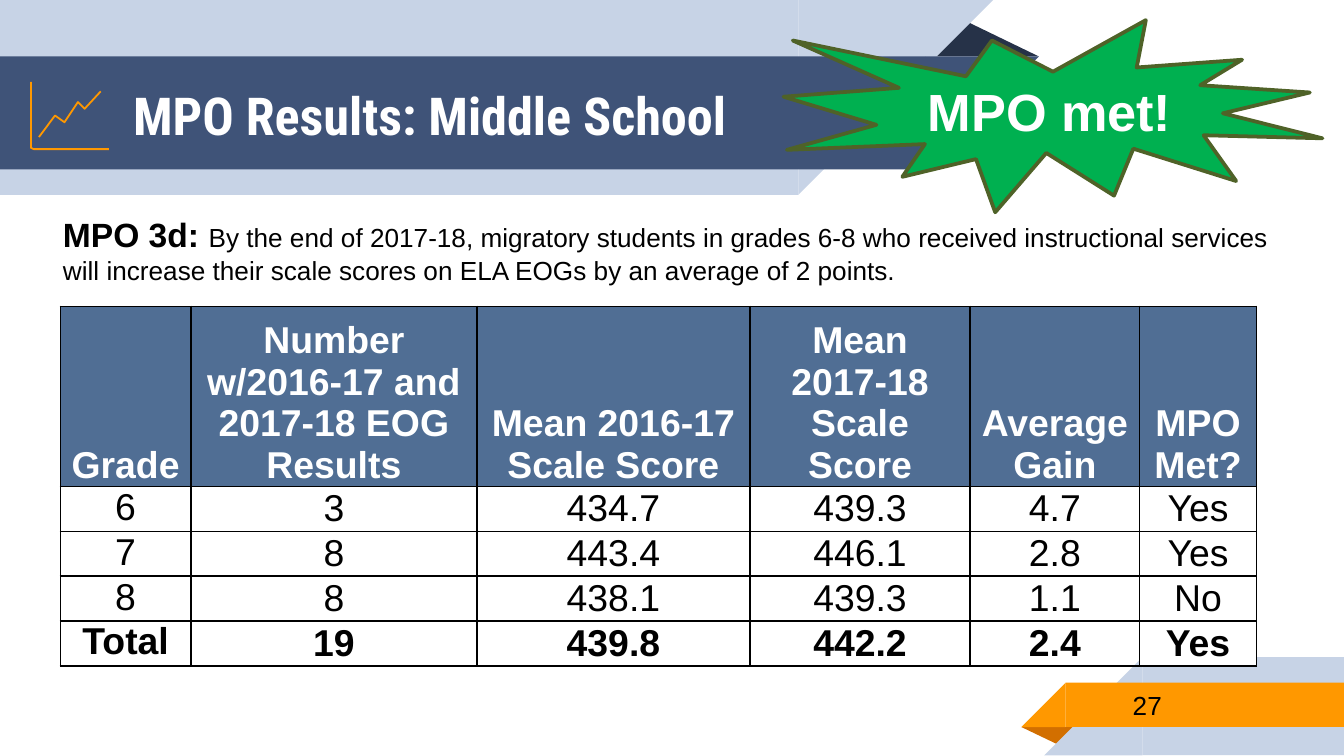
from lxml import etree
from pptx import Presentation
from pptx.dml.color import RGBColor
from pptx.enum.shapes import MSO_SHAPE as Kind
from pptx.enum.text import MSO_ANCHOR as Anchor, PP_ALIGN as Align
from pptx.oxml.ns import qn
from pptx.util import Inches, Pt

HEX = {
    "pale": "C7D3E6", "navy": "3F5378", "dark": "263248",
    "orange": "FF9800", "rust": "D26F00", "head": "506E94",
    "green": "00B050", "olive": "4F6228",
    "white": "FFFFFF", "black": "000000",
}
RGB = {name: RGBColor.from_string(code) for name, code in HEX.items()}


def style(font, size, color="black", bold=False, name="Arial"):
    font.size, font.bold, font.name = Pt(size), bold, name
    font.color.rgb = RGB[color]


def add_shape(kind, box, color, turn=0):
    shape = shapes.add_shape(kind, *map(Inches, box))
    shape.shadow.inherit = False
    shape.fill.solid()
    shape.fill.fore_color.rgb = RGB[color]
    shape.line.fill.background()
    shape.rotation = turn
    return shape


prs = Presentation()
prs.slide_width = Inches(10)
prs.slide_height = Inches(10) * 9 // 16
slide = prs.slides.add_slide(prs.slide_layouts[5])
shapes = slide.shapes

# Header and footer ribbons; a quarter turn sets each slanted end
RECT, WEDGE, FOLD = Kind.RECTANGLE, Kind.RIGHT_TRIANGLE, Kind.ISOSCELES_TRIANGLE
ribbons = [
    (FOLD, (6.88, 0.14, 0.85, 0.28), "dark", 0),
    (RECT, (0, 0, 5.94, 1.45), "pale", 0),
    (WEDGE, (5.94, 0, 1.45, 1.45), "pale", 90),
    (RECT, (0, 0.42, 6.89, 0.84), "navy", 0),
    (WEDGE, (6.89, 0.42, 0.84, 0.84), "navy", 90),
    (FOLD, (7.6, 5.41, 0.43, 0.14), "rust", 180),
    (RECT, (8.5, 4.89, 1.5, 0.73), "pale", 0),
    (WEDGE, (7.77, 4.89, 0.73, 0.73), "pale", 270),
    (RECT, (7.93, 5.08, 2.07, 0.33), "orange", 0),
    (WEDGE, (7.6, 5.08, 0.33, 0.33), "orange", 270),
]
for kind, box, color, turn in ribbons:
    part = add_shape(kind, box, color, turn)
    if kind == FOLD:
        part.adjustments[0] = 0.32

# Title, raised above the ribbons
title = shapes.title
shapes.element.append(title.element)
title.left, title.top = Inches(0.89), Inches(0.43)
title.width, title.height = Inches(6.51), Inches(0.84)
frame = title.text_frame
frame.text = "MPO Results: Middle School"
frame.vertical_anchor = Anchor.MIDDLE
frame.paragraphs[0].alignment = Align.LEFT
style(frame.paragraphs[0].font, 28, "white", True, "Roboto Condensed")

# Page number
page = shapes.add_textbox(Inches(8.33), Inches(5.07), Inches(1.63), Inches(0.35))
frame = page.text_frame
frame.text = "27"
frame.word_wrap = True
frame.vertical_anchor = Anchor.MIDDLE
style(frame.paragraphs[0].font, 14)

# Goal statement
goal = shapes.add_textbox(Inches(0.37), Inches(1.54), Inches(9.38), Inches(0.64))
goal.text_frame.word_wrap = True
para = goal.text_frame.paragraphs[0]
for text, size, bold in [
    ("MPO 3d: ", 18, True),
    ("By the end of 2017-18, migratory students in grades 6-8 who received "
     "instructional services will increase their scale scores on ELA EOGs "
     "by an average of 2 points.", 14, False),
]:
    run = para.add_run()
    run.text = text
    style(run.font, size, bold=bold)

# Line graph icon: axes, then trend
axes = [(0.23, 0.61), (0.23, 1.1), (0.25, 1.11), (0.81, 1.11)]
trend = [(0.29, 1.02), (0.41, 0.86), (0.48, 0.91), (0.58, 0.76),
         (0.63, 0.81), (0.75, 0.68)]
for points in (axes, trend):
    start, *rest = [(Inches(x), Inches(y)) for x, y in points]
    pen = shapes.build_freeform(*start)
    pen.add_line_segments(rest, close=False)
    icon = pen.convert_to_shape()
    icon.shadow.inherit = False
    icon.fill.background()
    icon.line.color.rgb = RGB["orange"]
    icon.line.width = Pt(0.96)

# Results table
rows = [
    ["Grade", "Number w/2016-17 and 2017-18 EOG Results",
     "Mean 2016-17 Scale Score", "Mean 2017-18 Scale Score",
     "Average Gain", "MPO Met?"],
    ["6", "3", "434.7", "439.3", "4.7", "Yes"],
    ["7", "8", "443.4", "446.1", "2.8", "Yes"],
    ["8", "8", "438.1", "439.3", "1.1", "No"],
    ["Total", "19", "439.8", "442.2", "2.4", "Yes"],
]
widths = [0.97, 2.13, 2.03, 1.64, 1.26, 0.87]
last = len(rows) - 1
table = shapes.add_table(len(rows), len(widths), Inches(0.45), Inches(2.28),
                         Inches(8.9), Inches(2.67)).table
table.first_row = table.horz_banding = False
for col, width in zip(table.columns, widths):
    col.width = Inches(width)
for r, row in enumerate(rows):
    table.rows[r].height = Inches(0.33 if r else 1.34)
    for c, text in enumerate(row):
        cell = table.cell(r, c)
        cell.text = text
        cell.margin_left = cell.margin_right = Pt(5.4)
        cell.margin_top = cell.margin_bottom = 0
        if r == 0:
            cell.vertical_anchor = Anchor.BOTTOM
        else:
            cell.vertical_anchor = Anchor.MIDDLE if c else Anchor.TOP
        para = cell.text_frame.paragraphs[0]
        para.alignment = Align.CENTER
        style(para.font, 20, "black" if r else "white", r in (0, last))
        props = cell._tc.get_or_add_tcPr()
        for side in ("lnL", "lnR", "lnT", "lnB"):
            edge = etree.SubElement(props, qn(f"a:{side}"), w=str(Pt(1)))
            fill = etree.SubElement(edge, qn("a:solidFill"))
            etree.SubElement(fill, qn("a:srgbClr"), val=HEX["black"])
        if r == 0 or (r == last and c == len(widths) - 1):
            cell.fill.solid()
            cell.fill.fore_color.rgb = RGB["white" if r else "head"]
        else:
            cell.fill.background()

# Result burst
burst = add_shape(Kind.EXPLOSION1, (5.83, 0.15, 4.01, 1.43), "green")
burst.line.color.rgb = RGB["olive"]
burst.line.width = Pt(2)
frame = burst.text_frame
frame.text = "MPO met!"
frame.vertical_anchor = Anchor.MIDDLE
frame.paragraphs[0].alignment = Align.CENTER
style(frame.paragraphs[0].font, 28, "white", True)

prs.save("out.pptx")
